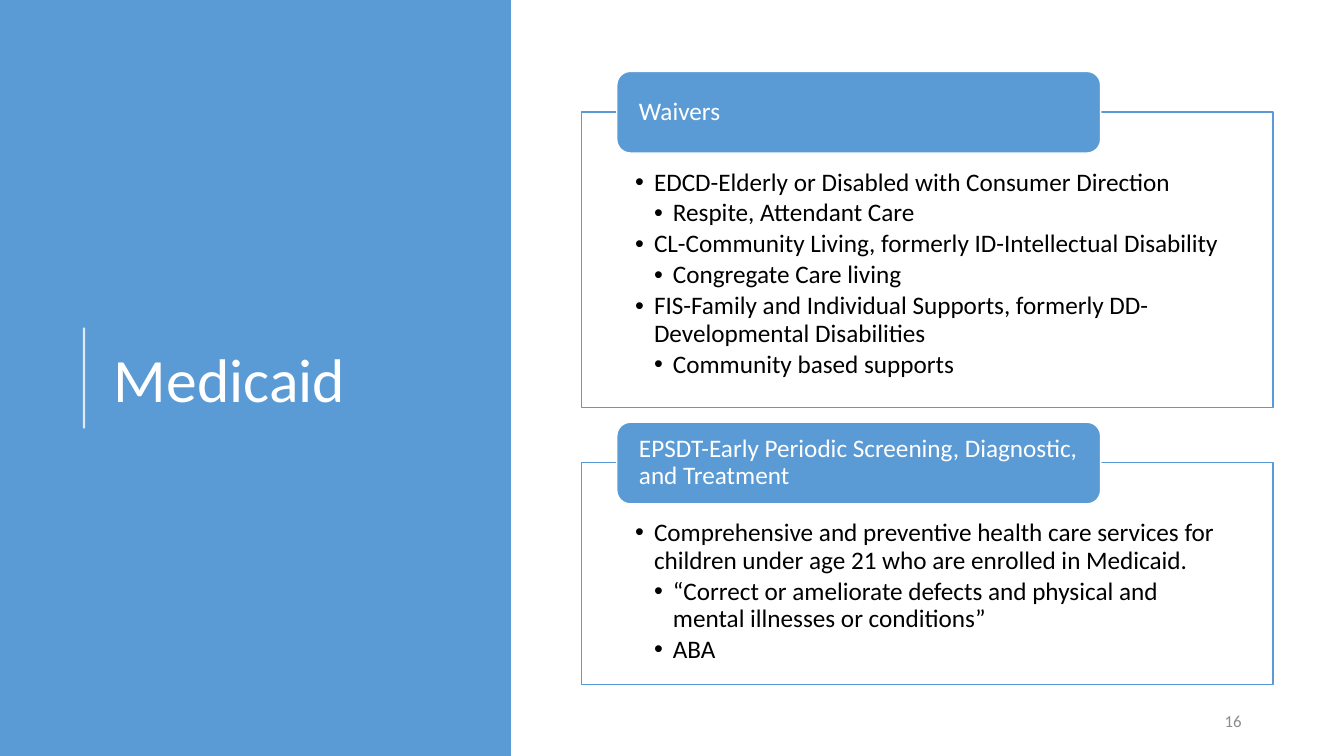
from lxml import etree
from pptx import Presentation
from pptx.dml.color import RGBColor
from pptx.enum import shapes, text
from pptx.oxml import ns
from pptx.util import Pt

COLORS = {"blue": "5B9BD5", "white": "FFFFFF", "black": "000000", "gray": "8C8C8C"}
BULLET_INDENT = 13.5


def add_box(kind, left, top, width, height, fill=None, line=None):
    sp = s.shapes.add_shape(kind, Pt(left), Pt(top), Pt(width), Pt(height))
    sp.shadow.inherit = False
    for part, color in ((sp.fill, fill), (sp.line.fill, line)):
        if color:
            part.solid()
            part.fore_color.rgb = RGBColor.from_string(COLORS[color])
        else:
            part.background()
    if line:
        sp.line.width = Pt(1)
    return sp


def write(sp, items, size, color, margins=(7.2, 3.6, 7.2, 3.6), middle=True,
          align=text.PP_ALIGN.LEFT, spacing=0.9, after=0):
    """Fill a shape with (level, wording) items; level 0 has no bullet."""
    tf = sp.text_frame
    tf.word_wrap = True
    tf.vertical_anchor = text.MSO_ANCHOR.MIDDLE if middle else text.MSO_ANCHOR.TOP
    for side, margin in zip(("left", "top", "right", "bottom"), margins):
        setattr(tf, "margin_" + side, Pt(margin))
    for i, (level, wording) in enumerate(items):
        p = tf.add_paragraph() if i else tf.paragraphs[0]
        for name, value in {"alignment": align, "line_spacing": spacing,
                            "space_after": Pt(after), "level": level}.items():
            setattr(p, name, value)
        if level:
            pPr = p._p.get_or_add_pPr()
            pPr.set("marL", str(Pt(BULLET_INDENT * level)))
            pPr.set("indent", str(-Pt(BULLET_INDENT)))
            etree.SubElement(pPr, ns.qn("a:buFont"), typeface="Arial")
            etree.SubElement(pPr, ns.qn("a:buChar"), char="•")
        r = p.add_run()
        r.text = wording
        r.font.name = "Calibri"
        r.font.size = Pt(size)
        r.font.color.rgb = RGBColor.from_string(COLORS[color])


prs = Presentation()
prs.slide_width, prs.slide_height = Pt(960), Pt(540)
s = prs.slides.add_slide(prs.slide_layouts[6])

# Blue side band with accent line and title
add_box(shapes.MSO_SHAPE.RECTANGLE, 0, 0, 365, 540, fill="blue")
accent = s.shapes.add_connector(shapes.MSO_CONNECTOR.STRAIGHT, Pt(60), Pt(306), Pt(60), Pt(234))
accent.line.width = Pt(1.5)
accent.line.color.rgb = RGBColor.from_string(COLORS["white"])
accent_color = accent.line.fill._xPr.find(".//" + ns.qn("a:srgbClr"))
etree.SubElement(accent_color, ns.qn("a:alpha"), val="80000")
etree.SubElement(accent._element.spPr, ns.qn("a:effectLst"))

title = s.shapes.add_textbox(Pt(74.2), Pt(56.2), Pt(265.7), Pt(433.4))
write(title, [(0, "Medicaid")], 44, "white")

# Sections: panel top, panel height, heading, bullets
sections = [
    (79.9, 211, "Waivers", [
        (1, "EDCD-Elderly or Disabled with Consumer Direction"),
        (2, "Respite, Attendant Care"),
        (1, "CL-Community Living, formerly ID-Intellectual Disability"),
        (2, "Congregate Care living"),
        (1, "FIS-Family and Individual Supports, formerly DD-Developmental Disabilities"),
        (2, "Community based supports"),
    ]),
    (330.5, 158.4, "EPSDT-Early Periodic Screening, Diagnostic, and Treatment", [
        (1, "Comprehensive and preventive health care services for children under age 21 "
            "who are enrolled in Medicaid."),
        (2, "“Correct or ameliorate defects and physical and mental illnesses or conditions”"),
        (2, "ABA"),
    ]),
]
for top, height, heading, bullets in sections:
    panel = add_box(shapes.MSO_SHAPE.RECTANGLE, 415.4, top, 493.9, height, "white", "blue")
    panel_color = panel._element.spPr.find(ns.qn("a:solidFill"))[0]
    etree.SubElement(panel_color, ns.qn("a:alpha"), val="90000")
    write(panel, bullets, 18, "black", (38.3, 41, 38.3, 10), middle=False, after=2.7)

    header = add_box(shapes.MSO_SHAPE.ROUNDED_RECTANGLE, 440.6, top - 28.9, 345.6, 58.3,
                     "blue", "white")
    write(header, [(0, heading)], 18, "white", (13, 0, 13, 0))

# Slide number
number = s.shapes.add_textbox(Pt(678), Pt(500.5), Pt(216), Pt(28.8))
write(number, [(0, "16")], 12, "gray", align=text.PP_ALIGN.RIGHT, spacing=1.0)

prs.save("out.pptx")
